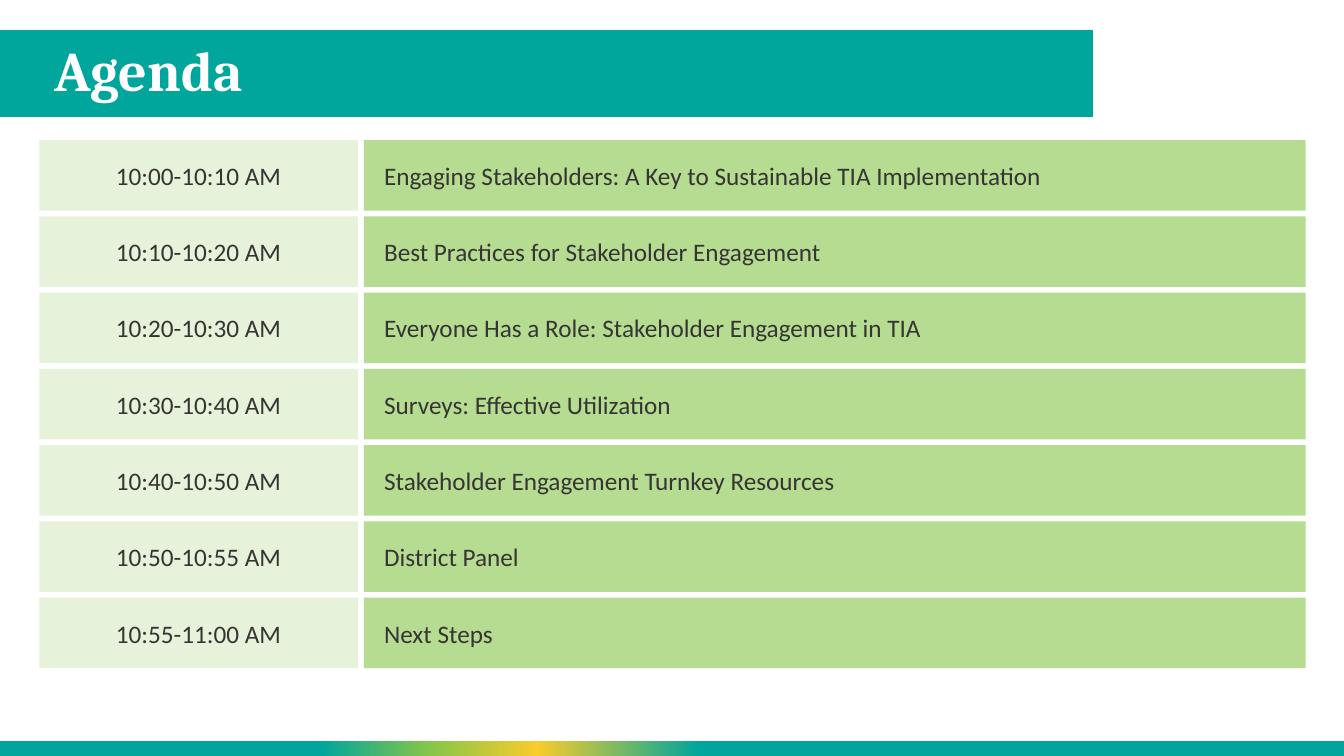
from lxml import etree
from pptx import Presentation
from pptx.dml.color import RGBColor
from pptx.enum.shapes import MSO_SHAPE
from pptx.enum.text import MSO_ANCHOR, MSO_AUTO_SIZE, PP_ALIGN
from pptx.oxml.ns import qn
from pptx.util import Inches, Pt

RECT = MSO_SHAPE.RECTANGLE
MIDDLE = MSO_ANCHOR.MIDDLE
LEFT, CENTER = PP_ALIGN.LEFT, PP_ALIGN.CENTER

TITLE = "Agenda"
AGENDA = [
    ("10:00-10:10 AM", "Engaging Stakeholders: A Key to Sustainable TIA Implementation"),
    ("10:10-10:20 AM", "Best Practices for Stakeholder Engagement"),
    ("10:20-10:30 AM", "Everyone Has a Role: Stakeholder Engagement in TIA"),
    ("10:30-10:40 AM", "Surveys: Effective Utilization"),
    ("10:40-10:50 AM", "Stakeholder Engagement Turnkey Resources"),
    ("10:50-10:55 AM", "District Panel"),
    ("10:55-11:00 AM", "Next Steps"),
]

TEAL, WHITE, INK = "00A69B", "FFFFFF", "363534"
FOOTER_STOPS = [(0, TEAL), (24, TEAL), (32, "87C54A"), (40, "F8CC2B"), (52, TEAL), (100, TEAL)]

# left, width, fill, alignment, side inset
COLUMNS = [
    (0.39, 3.16, "E6F3DA", CENTER, 0.1),
    (3.61, 9.34, "B6DC91", LEFT, 0.2),
]
FIRST_TOP, LAST_TOP, ROW_HEIGHT = 1.39, 5.93, 0.7


def rgb(color):
    return RGBColor.from_string(color)


def add_rect(s, left, top, width, height, color):
    sp = s.shapes.add_shape(RECT, Inches(left), Inches(top), Inches(width), Inches(height))
    sp.shadow.inherit = False
    sp.fill.solid()
    sp.fill.fore_color.rgb = rgb(color)
    sp.line.fill.background()
    return sp


def set_text(sp, text, font, size, color, align, inset=0.1, bold=False):
    tf = sp.text_frame
    tf.text = text
    tf.word_wrap = True
    tf.auto_size = MSO_AUTO_SIZE.NONE
    tf.vertical_anchor = MIDDLE
    tf.margin_left = tf.margin_right = Inches(inset)
    tf.margin_top = tf.margin_bottom = Inches(0.05)
    p = tf.paragraphs[0]
    p.alignment = align
    r = p.runs[0]
    r.font.name = font
    r.font.size = Pt(size)
    r.font.bold = bold
    r.font.color.rgb = rgb(color)


def set_gradient(sp, stops):
    """Fill the shape from left to right with (percent, colour) stops."""
    sp.fill.gradient()
    sp.fill.gradient_angle = 0
    stop_list = sp.element.find(".//" + qn("a:gsLst"))
    for old in list(stop_list):
        stop_list.remove(old)
    for percent, color in stops:
        stop = etree.SubElement(stop_list, qn("a:gs"), pos=str(percent * 1000))
        etree.SubElement(stop, qn("a:srgbClr"), val=color)


prs = Presentation()
prs.slide_width, prs.slide_height = Inches(13.33), Inches(7.5)
s = prs.slides.add_slide(prs.slide_layouts[5])

add_rect(s, -0.01, 0.3, 10.85, 0.86, TEAL)
footer = add_rect(s, -0.01, 7.35, 13.34, 0.15, TEAL)
set_gradient(footer, FOOTER_STOPS)

title = s.shapes.title
title.left, title.top = Inches(0.44), Inches(0.3)
title.width, title.height = Inches(10.06), Inches(0.86)
set_text(title, TITLE, "Cambria", 40, WHITE, LEFT, bold=True)
title.text_frame.paragraphs[0].line_spacing = 0.9
title.element.getparent().append(title.element)  # bring in front of the banner

pitch = (LAST_TOP - FIRST_TOP) / (len(AGENDA) - 1)
for i, row in enumerate(AGENDA):
    for text, (left, width, fill, align, inset) in zip(row, COLUMNS):
        cell = add_rect(s, left, FIRST_TOP + i * pitch, width, ROW_HEIGHT, fill)
        set_text(cell, text, "Calibri", 18, INK, align, inset)

prs.save("out.pptx")
